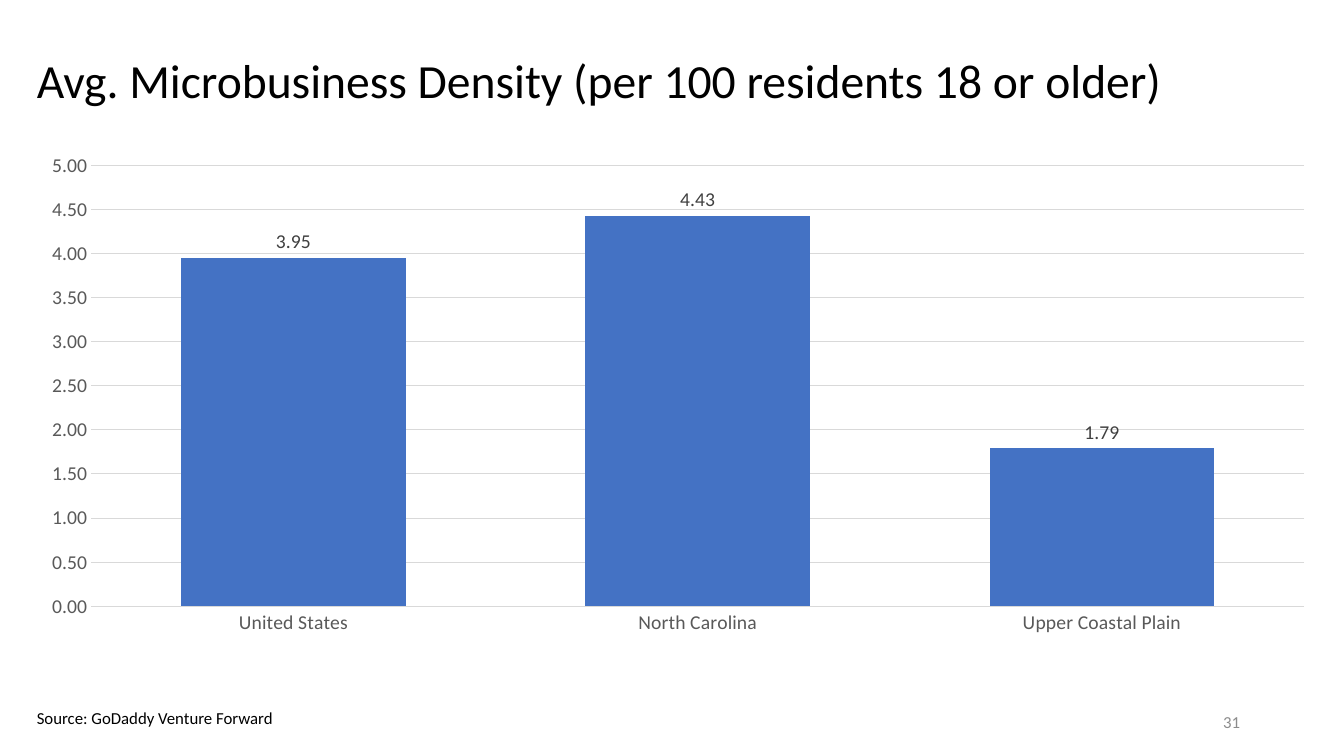
import dataclasses

import lxml.etree
import pptx
import pptx.chart.data
import pptx.dml.color
import pptx.enum.chart
import pptx.enum.text
import pptx.oxml.ns
import pptx.util

ALIGN = pptx.enum.text.PP_ALIGN
ANCHOR = pptx.enum.text.MSO_ANCHOR


@dataclasses.dataclass(frozen=True)
class Theme:
    """Colours, type sizes and font of the slide."""
    font: str = "Calibri"
    ink: str = "000000"
    axis: str = "595959"
    label: str = "404040"
    number: str = "8C8C8C"
    grid: str = "D9D9D9"
    bar: str = "4472C4"
    title_pt: int = 34
    chart_pt: int = 14
    small_pt: int = 12


class Deck:
    """Holds the theme and current slide, placing elements by shares of its size."""

    def __init__(self, theme):
        self.theme = theme
        self.prs = pptx.Presentation()
        self.prs.slide_width = pptx.util.Inches(13.33)
        self.prs.slide_height = pptx.util.Inches(7.5)
        self.s = self.prs.slides.add_slide(self.prs.slide_layouts[6])

    def box(self, x, y, w, h):
        width, height = self.prs.slide_width, self.prs.slide_height
        return [int(v) for v in (x * width, y * height, w * width, h * height)]

    def style(self, font, size, color):
        font.name = self.theme.font
        font.size = pptx.util.Pt(size)
        font.color.rgb = pptx.dml.color.RGBColor.from_string(color)

    def line(self, line):
        line.color.rgb = pptx.dml.color.RGBColor.from_string(self.theme.grid)
        line.width = pptx.util.Pt(0.75)

    def text(self, text, area, size, color, align=ALIGN.LEFT,
             anchor=ANCHOR.MIDDLE, wrap=True, spacing=1.0):
        tf = self.s.shapes.add_textbox(*self.box(*area)).text_frame
        tf.word_wrap = wrap
        tf.vertical_anchor = anchor
        p = tf.paragraphs[0]
        p.text = text
        p.alignment = align
        p.line_spacing = spacing
        self.style(p.font, size, color)

    def columns(self, values, area, plot_area):
        t = self.theme
        data = pptx.chart.data.CategoryChartData(number_format="0.00")
        data.categories = list(values)
        data.add_series("Series 1", list(values.values()))
        chart = self.s.shapes.add_chart(
            pptx.enum.chart.XL_CHART_TYPE.COLUMN_CLUSTERED, *self.box(*area), data).chart
        chart.has_legend = False
        chart.has_title = False
        self.style(chart.font, t.chart_pt, t.ink)

        for axis in (chart.category_axis, chart.value_axis):
            axis.major_tick_mark = pptx.enum.chart.XL_TICK_MARK.NONE
            axis.minor_tick_mark = pptx.enum.chart.XL_TICK_MARK.NONE
            self.style(axis.tick_labels.font, t.chart_pt, t.axis)
        self.line(chart.category_axis.format.line)
        axis = chart.value_axis
        axis.minimum_scale, axis.maximum_scale, axis.major_unit = 0, 5, 0.5
        axis.format.line.fill.background()
        self.line(axis.major_gridlines.format.line)
        axis.tick_labels.number_format = "0.00"
        axis.tick_labels.number_format_is_linked = False

        plot = chart.plots[0]
        plot.gap_width = 80
        plot.vary_by_categories = False
        fill = plot.series[0].format.fill
        fill.solid()
        fill.fore_color.rgb = pptx.dml.color.RGBColor.from_string(t.bar)
        labels = plot.series[0].data_labels
        labels.show_value = True
        labels.number_format = "0.00"
        labels.number_format_is_linked = False
        labels.position = pptx.enum.chart.XL_LABEL_POSITION.OUTSIDE_END
        self.style(labels.font, t.chart_pt, t.label)
        self.place_plot(chart, plot_area)

    def place_plot(self, chart, plot_area):
        qn = pptx.oxml.ns.qn
        area = chart.element.find(".//" + qn("c:plotArea"))
        for old in area.findall(qn("c:layout")):
            area.remove(old)
        layout = lxml.etree.SubElement(area, qn("c:layout"))
        area.insert(0, layout)
        manual = lxml.etree.SubElement(layout, qn("c:manualLayout"))
        settings = [("layoutTarget", "inner"), ("xMode", "edge"), ("yMode", "edge")]
        for tag, value in settings + list(zip("xywh", plot_area)):
            lxml.etree.SubElement(manual, qn("c:" + tag)).set("val", str(value))


def main():
    t = Theme()
    deck = Deck(t)
    left = 0.02
    deck.text("Avg. Microbusiness Density (per 100 residents 18 or older)",
              (left, 0.03, 0.96, 0.16), t.title_pt, t.ink, spacing=0.9)
    deck.columns({"United States": 3.95, "North Carolina": 4.43, "Upper Coastal Plain": 1.79},
                 (left, 0.19, 0.96, 0.72), (0.05, 0.04, 0.94, 0.81))
    deck.text("Source: GoDaddy Venture Forward", (left, 0.93, 0.2, 0.04),
              t.small_pt, t.ink, anchor=ANCHOR.TOP, wrap=False)
    deck.text("31", (0.71, 0.93, 0.22, 0.05), t.small_pt, t.number, align=ALIGN.RIGHT)
    deck.prs.save("out.pptx")


if __name__ == "__main__":
    main()
